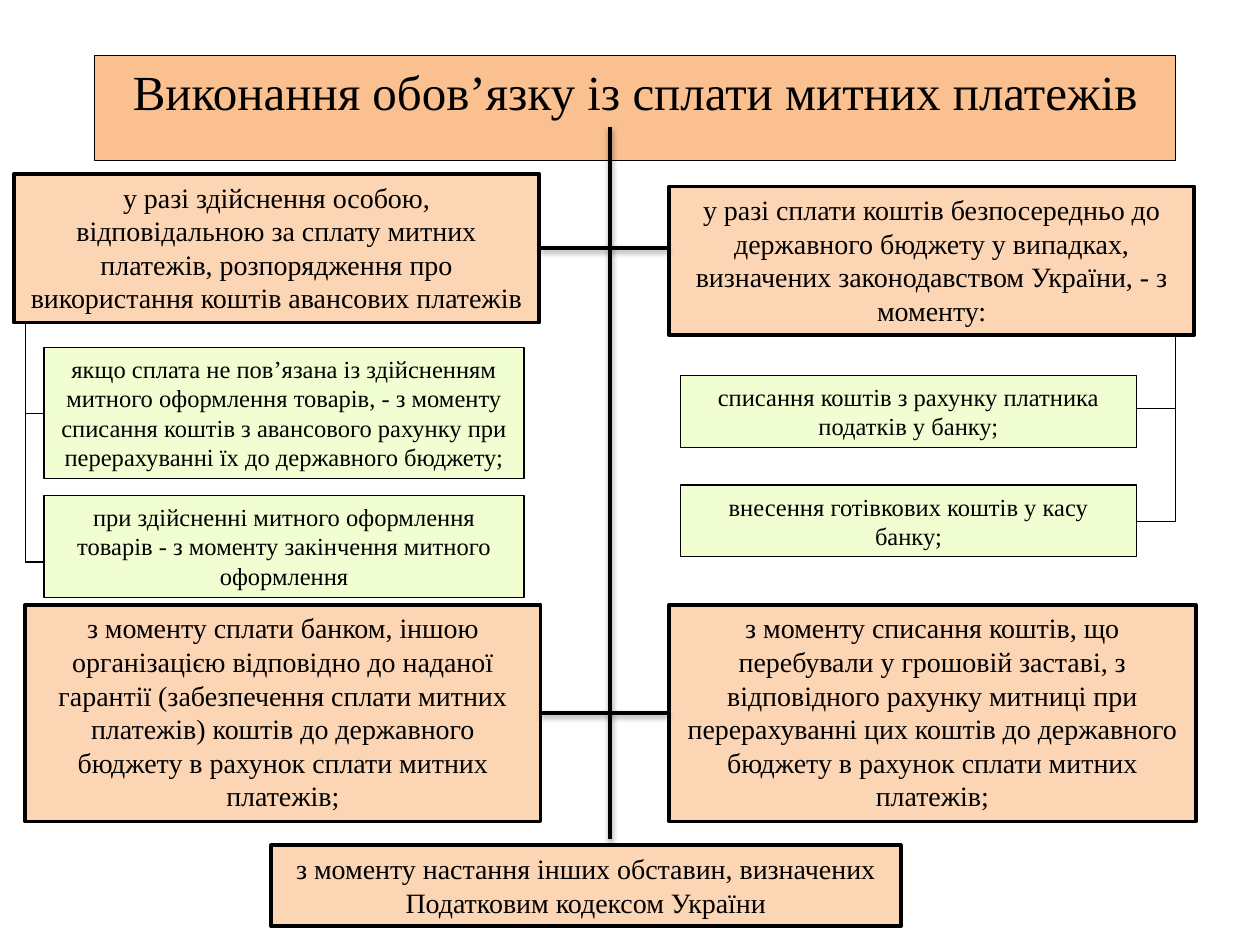
import dataclasses

import pptx
import pptx.dml.color
import pptx.enum.shapes
import pptx.enum.text
import pptx.oxml
import pptx.oxml.ns
import pptx.util
from pptx.util import Inches

FONT = "Times New Roman"
COLORS = {
    "head": "FAC090",
    "main": "FCD5B5",
    "sub": "F1FED2",
    "ink": "000000",
}
ANCHOR = pptx.enum.text.MSO_ANCHOR
LEFT, RIGHT = 4.29, 5.31  # inner edges of the two columns
STEM = 4.84
RAIL_L, RAIL_R = 0.2, 9.33


@dataclasses.dataclass
class Box:
    left: float
    top: float
    width: float
    height: float
    text: str
    fill: str = "main"
    size: int = 16
    edge: float = 2.25
    mid: bool = False


@dataclasses.dataclass
class Line:
    x1: float
    y1: float
    x2: float
    y2: float
    bold: bool = False


def rgb(name: str) -> pptx.dml.color.RGBColor:
    return pptx.dml.color.RGBColor.from_string(COLORS[name])


def style(shape, box: Box) -> None:
    """Place a shape and give it the fill, outline and text of a box."""
    shape.left, shape.top = Inches(box.left), Inches(box.top)
    shape.width, shape.height = Inches(box.width), Inches(box.height)
    shape.fill.solid()
    shape.fill.fore_color.rgb = rgb(box.fill)
    shape.line.color.rgb = rgb("ink")
    shape.line.width = pptx.util.Pt(box.edge)
    frame = shape.text_frame
    frame.text = box.text
    frame.word_wrap = True
    frame.auto_size = pptx.enum.text.MSO_AUTO_SIZE.SHAPE_TO_FIT_TEXT
    frame.vertical_anchor = ANCHOR.MIDDLE if box.mid else ANCHOR.TOP
    par = frame.paragraphs[0]
    par.alignment = pptx.enum.text.PP_ALIGN.CENTER
    font = par.runs[0].font
    font.name, font.size = FONT, pptx.util.Pt(box.size)
    font.color.rgb = rgb("ink")


def add_box(slide, box: Box) -> None:
    rect = pptx.enum.shapes.MSO_SHAPE.RECTANGLE
    shape = slide.shapes.add_shape(rect, 0, 0, 0, 0)
    shape.shadow.inherit = False
    style(shape, box)


def add_line(slide, line: Line) -> None:
    kind = pptx.enum.shapes.MSO_CONNECTOR.STRAIGHT
    ends = [Inches(v) for v in (line.x1, line.y1, line.x2, line.y2)]
    link = slide.shapes.add_connector(kind, *ends)
    link.line.color.rgb = rgb("ink")
    link.line.width = pptx.util.Pt(2 if line.bold else 0.75)
    shade = (
        '<a:outerShdw blurRad="40000" dist="20000" dir="5400000" rotWithShape="0">'
        f'<a:srgbClr val="{COLORS["ink"]}"><a:alpha val="38000"/></a:srgbClr>'
        "</a:outerShdw>"
    ) if line.bold else ""
    names = pptx.oxml.ns.nsdecls("a")
    xml = f"<a:effectLst {names}>{shade}</a:effectLst>"
    link._element.spPr.append(pptx.oxml.parse_xml(xml))


TITLE = Box(0.75, 0.44, 8.58, 0.57,
            "Виконання обов’язку із сплати митних платежів",
            "head", 28, 0.75)

BOXES = [
    # Main cases
    Box(0.11, 1.38, 4.17, 1.18,
        "у разі здійснення особою, відповідальною за сплату митних платежів, "
        "розпорядження про використання коштів авансових платежів"),
    Box(RIGHT, 1.48, 4.17, 1.18,
        "у разі сплати коштів безпосередньо до державного бюджету у випадках, "
        "визначених законодавством України, - з моменту:"),
    Box(0.2, 4.8, 4.09, 1.72,
        "з моменту сплати банком, іншою організацією відповідно до наданої "
        "гарантії (забезпечення сплати митних платежів) коштів до державного "
        "бюджету в рахунок сплати митних платежів;"),
    Box(RIGHT, 4.8, 4.18, 1.72,
        "з моменту списання коштів, що перебували у грошовій заставі, з "
        "відповідного рахунку митниці при перерахуванні цих коштів до "
        "державного бюджету в рахунок сплати митних платежів;"),
    Box(2.15, 6.71, 5, 0.64,
        "з моменту настання інших обставин, "
        "визначених Податковим кодексом України"),
    # Details under the upper cases
    Box(0.35, 2.76, 3.81, 1.04,
        "якщо сплата не пов’язана із здійсненням митного оформлення товарів, "
        "- з моменту списання коштів з авансового рахунку при перерахуванні "
        "їх до державного бюджету;", "sub", 14, 0.75),
    Box(0.35, 3.93, 3.81, 0.81,
        "при здійсненні митного оформлення товарів - з моменту закінчення "
        "митного оформлення", "sub", 14, 0.75, True),
    Box(5.4, 2.98, 3.62, 0.57,
        "списання коштів з рахунку платника податків у банку;",
        "sub", 14, 0.75, True),
    Box(5.4, 3.85, 3.62, 0.57,
        "внесення готівкових коштів у касу банку;",
        "sub", 14, 0.75, True),
]

LINES = [
    # Stem and its cross bars
    Line(STEM, 1.01, STEM, 6.66, True),
    *(Line(LEFT, y, RIGHT, y, True) for y in (1.97, 5.66)),
    # Side rails and their branches
    Line(RAIL_L, 2.56, RAIL_L, 4.46),
    *(Line(RAIL_L, y, 0.35, y) for y in (3.28, 4.46)),
    Line(RAIL_R, 2.66, RAIL_R, 4.14),
    *(Line(RAIL_R, y, 9.02, y) for y in (3.24, 4.14)),
]


def main() -> None:
    deck = pptx.Presentation()
    deck.slide_width, deck.slide_height = Inches(10), Inches(7.5)
    slide = deck.slides.add_slide(deck.slide_layouts[5])
    style(slide.shapes.title, TITLE)
    for box in BOXES:
        add_box(slide, box)
    for line in LINES:
        add_line(slide, line)
    deck.save("out.pptx")


if __name__ == "__main__":
    main()
